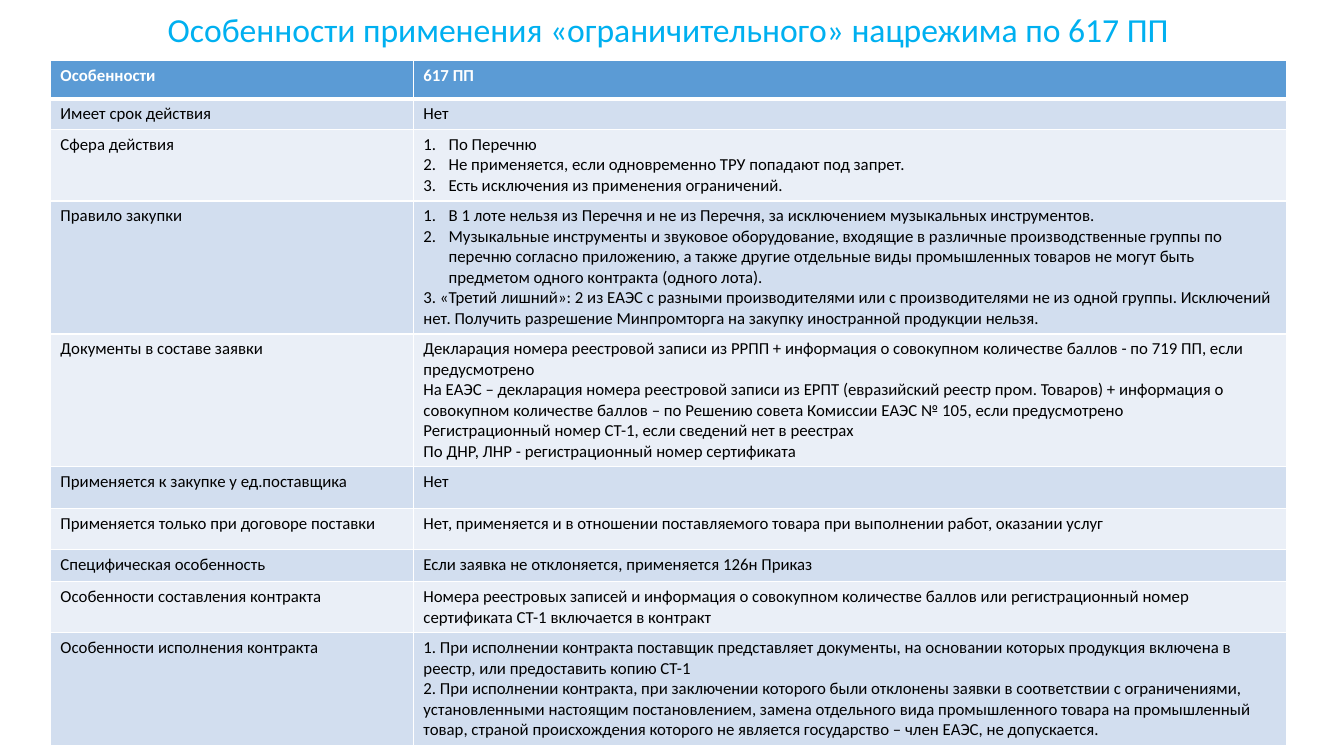
from dataclasses import dataclass

from lxml.etree import SubElement
from pptx import Presentation
from pptx.dml.color import RGBColor as Rgb
from pptx.enum.text import MSO_ANCHOR as Anchor, PP_ALIGN as Align
from pptx.oxml.ns import qn
from pptx.util import Pt

PX = 9144  # 100 px to the inch
COLORS = {
    "title": "00B0F0",
    "head": "5B9BD5",
    "dark": "D2DEEF",
    "light": "EAEFF7",
    "white": "FFFFFF",
    "black": "000000",
}
TITLE = "Особенности применения «ограничительного» нацрежима по 617 ПП"
COLS = (360, 866)


@dataclass
class Row:
    high: int
    label: str
    lines: tuple[str, ...]
    listed: int = 0  # how many leading lines are auto-numbered


ROWS = (
    Row(38, "Особенности", ("617 ПП",)),
    Row(30, "Имеет срок действия", ("Нет",)),
    Row(28, "Сфера действия", (
        "По Перечню",
        "Не применяется, если одновременно ТРУ попадают под запрет.",
        "Есть исключения из применения ограничений.",
    ), 3),
    Row(28, "Правило закупки", (
        "В 1 лоте нельзя из Перечня и не из Перечня, за исключением музыкальных инструментов.",
        "Музыкальные инструменты и звуковое оборудование, входящие в различные "
        "производственные группы по перечню согласно приложению, а также другие отдельные "
        "виды промышленных товаров не могут быть предметом одного контракта (одного лота).",
        "3. «Третий лишний»: 2 из ЕАЭС с разными производителями или с производителями "
        "не из одной группы. Исключений нет. Получить разрешение Минпромторга на закупку "
        "иностранной продукции нельзя.",
    ), 2),
    Row(47, "Документы в составе заявки", (
        "Декларация номера реестровой записи из РРПП + информация о совокупном "
        "количестве баллов - по 719 ПП, если предусмотрено",
        "На ЕАЭС – декларация номера реестровой записи из ЕРПТ (евразийский реестр пром. "
        "Товаров) + информация о совокупном количестве баллов – по Решению совета "
        "Комиссии ЕАЭС № 105, если предусмотрено",
        "Регистрационный номер СТ-1, если сведений нет в реестрах",
        "По ДНР, ЛНР - регистрационный номер сертификата",
    )),
    Row(41, "Применяется к закупке у ед.поставщика", ("Нет",)),
    Row(41, "Применяется только при договоре поставки", (
        "Нет, применяется и в отношении поставляемого товара при выполнении работ, "
        "оказании услуг",
    )),
    Row(32, "Специфическая особенность", (
        "Если заявка не отклоняется, применяется 126н Приказ",
    )),
    Row(41, "Особенности составления контракта", (
        "Номера реестровых записей и информация о совокупном количестве баллов или "
        "регистрационный номер сертификата СТ-1 включается в контракт",
    )),
    Row(41, "Особенности исполнения контракта", (
        "1. При исполнении контракта поставщик представляет документы, на основании "
        "которых продукция включена в реестр, или предоставить копию СТ-1",
        "2. При исполнении контракта, при заключении которого были отклонены заявки в "
        "соответствии с ограничениями, установленными настоящим постановлением, замена "
        "отдельного вида промышленного товара на промышленный товар, страной "
        "происхождения которого не является государство – член ЕАЭС, не допускается.",
    )),
)


def rgb(name: str) -> Rgb:
    return Rgb.from_string(COLORS[name])


def style(run, color: str, **values) -> None:
    for key, value in ({"name": "Calibri"} | values).items():
        setattr(run.font, key, value)
    run.font.color.rgb = rgb(color)


def number(para) -> None:
    props = para._p.get_or_add_pPr()
    props.set("marL", str(25 * PX))
    props.set("indent", str(-25 * PX))
    SubElement(props, qn("a:buFont"), typeface="+mj-lt")
    SubElement(props, qn("a:buAutoNum"), type="arabicPeriod")


def edge(cell, side: str, width: int) -> None:
    line = SubElement(cell._tc.get_or_add_tcPr(), qn(f"a:ln{side}"), w=str(Pt(width)))
    fill = SubElement(line, qn("a:solidFill"))
    SubElement(fill, qn("a:srgbClr"), val=COLORS["white"])


def write(cell, lines: tuple[str, ...], listed: int, head: bool) -> None:
    frame = cell.text_frame
    for i, text in enumerate(lines):
        para = frame.add_paragraph() if i else frame.paragraphs[0]
        if i < listed:
            number(para)
        run = para.add_run()
        run.text = text
        style(run, "white" if head else "black", size=Pt(12), bold=head)


def draw_table(slide) -> None:
    box = [n * PX for n in (50, 60, sum(COLS), 670)]
    frame = slide.shapes.add_table(len(ROWS), len(COLS), *box)
    table = frame.table
    table.horz_banding = False
    for col, wide in zip(table.columns, COLS):
        col.width = wide * PX
    for r, row in enumerate(ROWS):
        table.rows[r].height = row.high * PX
        tone = "head" if r == 0 else "dark" if r % 2 else "light"
        widths = {"L": 1, "R": 1, "T": 3 if r == 1 else 1, "B": 3 if r == 0 else 1}
        for c, (lines, listed) in enumerate((((row.label,), 0), (row.lines, row.listed))):
            cell = table.cell(r, c)
            for side, width in widths.items():
                edge(cell, side, width)
            cell.fill.solid()
            cell.fill.fore_color.rgb = rgb(tone)
            write(cell, lines, listed, r == 0)
    frame.height = box[3]


def draw_title(slide) -> None:
    box = slide.shapes.add_textbox(*(n * PX for n in (88, 21, 1150, 20)))
    frame = box.text_frame
    frame.word_wrap = True
    frame.vertical_anchor = Anchor.MIDDLE
    para = frame.paragraphs[0]
    para.alignment = Align.CENTER
    para.line_spacing = 0.9
    run = para.add_run()
    run.text = TITLE
    style(run, "title", size=Pt(24))


def main() -> None:
    deck = Presentation()
    deck.slide_width, deck.slide_height = 1333 * PX, 750 * PX
    slide = deck.slides.add_slide(deck.slide_layouts[6])
    draw_table(slide)
    draw_title(slide)
    deck.save("out.pptx")


if __name__ == "__main__":
    main()
